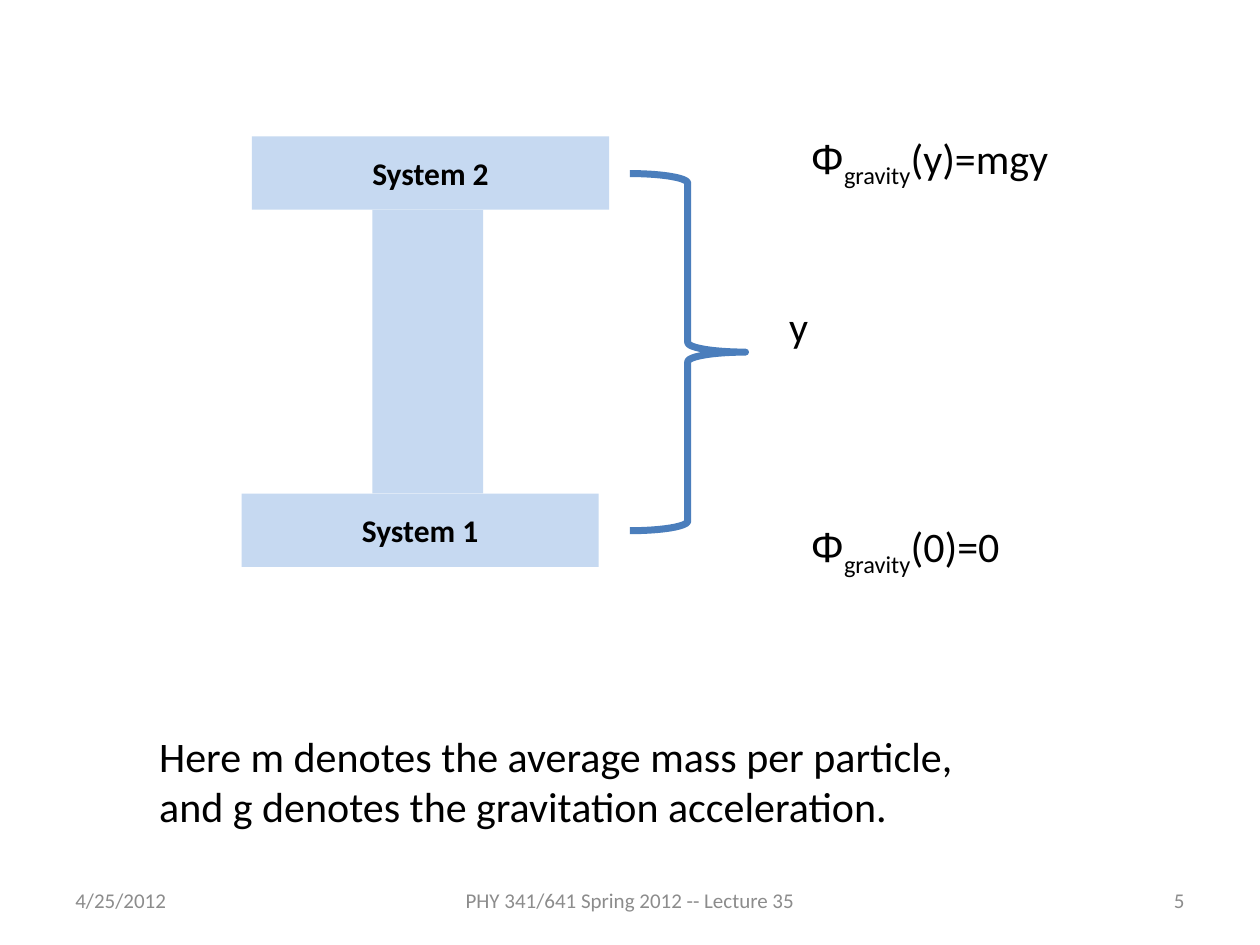
from dataclasses import dataclass

from pptx import Presentation
from pptx.dml.color import RGBColor
from pptx.enum.shapes import MSO_SHAPE
from pptx.enum.text import MSO_ANCHOR, PP_ALIGN
from pptx.util import Cm, Pt


@dataclass(frozen=True)
class Theme:
    font: str = "Calibri"
    symbol_font: str = "Arial"
    text: RGBColor = RGBColor(0, 0, 0)
    muted: RGBColor = RGBColor(0x8C, 0x8C, 0x8C)
    block: RGBColor = RGBColor(0xC6, 0xD9, 0xF1)
    brace: RGBColor = RGBColor(0x4B, 0x7E, 0xBC)
    body_size: int = 24
    block_size: int = 18
    footer_size: int = 12
    brace_width: int = 4


THEME = Theme()


@dataclass(frozen=True)
class Box:
    """Left, top, width and height in centimetres."""
    left: float
    top: float
    width: float
    height: float

    def lengths(self) -> tuple:
        return Cm(self.left), Cm(self.top), Cm(self.width), Cm(self.height)


@dataclass(frozen=True)
class Block:
    box: Box
    label: str = ""


@dataclass(frozen=True)
class Label:
    box: Box
    text: str
    align: PP_ALIGN = PP_ALIGN.LEFT


BLOCKS = [
    Block(Box(5.08, 2.75, 7.2, 1.48), "System 2"),
    Block(Box(7.51, 4.23, 2.23, 5.72)),
    Block(Box(4.87, 9.95, 7.2, 1.48), "System 1"),
]
BRACE = Box(12.7, 3.5, 2.33, 7.2)
NOTES = [
    Label(Box(15.66, 5.93, 1.69, 1.28), "y"),
    Label(Box(2.96, 14.6, 17.36, 2.31),
          "Here m denotes the average mass per particle, "
          "and g denotes the gravitation acceleration."),
]
POTENTIALS = [
    Label(Box(16.09, 10.37, 4.87, 1.28), "(0)=0"),
    Label(Box(16.09, 2.54, 6.56, 1.28), "(y)=mgy"),
]
FOOTERS = [
    Label(Box(1.27, 17.65, 5.93, 1.01), "4/25/2012"),
    Label(Box(8.68, 17.65, 8.04, 1.01), "PHY 341/641 Spring 2012 -- Lecture 35",
          PP_ALIGN.CENTER),
    Label(Box(18.2, 17.65, 5.93, 1.01), "5", PP_ALIGN.RIGHT),
]


def style(p, size: int, color: RGBColor, align: PP_ALIGN, bold: bool = False) -> None:
    p.alignment = align
    p.font.name = THEME.font
    p.font.size = Pt(size)
    p.font.color.rgb = color
    p.font.bold = bold


def add_label(s, label: Label, size: int = THEME.body_size,
              color: RGBColor = THEME.text, anchor: MSO_ANCHOR = MSO_ANCHOR.TOP):
    tf = s.shapes.add_textbox(*label.box.lengths()).text_frame
    tf.word_wrap = True
    tf.vertical_anchor = anchor
    p = tf.paragraphs[0]
    if label.text:
        p.text = label.text
    style(p, size, color, label.align)
    return p


def add_potential(s, label: Label) -> None:
    """Write Φ with the subscript "gravity", followed by the label text."""
    p = add_label(s, Label(label.box, ""))
    symbol, subscript, rest = (p.add_run() for _ in range(3))
    symbol.text, subscript.text, rest.text = "Φ", "gravity", label.text
    symbol.font.name = THEME.symbol_font
    subscript._r.get_or_add_rPr().set("baseline", "-25000")


def add_block(s, block: Block) -> None:
    sp = s.shapes.add_shape(MSO_SHAPE.RECTANGLE, *block.box.lengths())
    sp.shadow.inherit = False
    sp.fill.solid()
    sp.fill.fore_color.rgb = THEME.block
    sp.line.fill.background()
    if block.label:
        p = sp.text_frame.paragraphs[0]
        p.text = block.label
        style(p, THEME.block_size, THEME.text, PP_ALIGN.CENTER, bold=True)


def add_brace(s, box: Box) -> None:
    sp = s.shapes.add_shape(MSO_SHAPE.RIGHT_BRACE, *box.lengths())
    sp.shadow.inherit = False
    sp.fill.background()
    sp.line.color.rgb = THEME.brace
    sp.line.width = Pt(THEME.brace_width)


def main() -> None:
    prs = Presentation()
    prs.slide_width, prs.slide_height = Cm(25.4), Cm(19.05)
    s = prs.slides.add_slide(prs.slide_layouts[6])
    for footer in FOOTERS:
        add_label(s, footer, THEME.footer_size, THEME.muted, MSO_ANCHOR.MIDDLE)
    for block in BLOCKS:
        add_block(s, block)
    add_brace(s, BRACE)
    for potential in POTENTIALS:
        add_potential(s, potential)
    for note in NOTES:
        add_label(s, note)
    prs.save("out.pptx")


if __name__ == "__main__":
    main()
